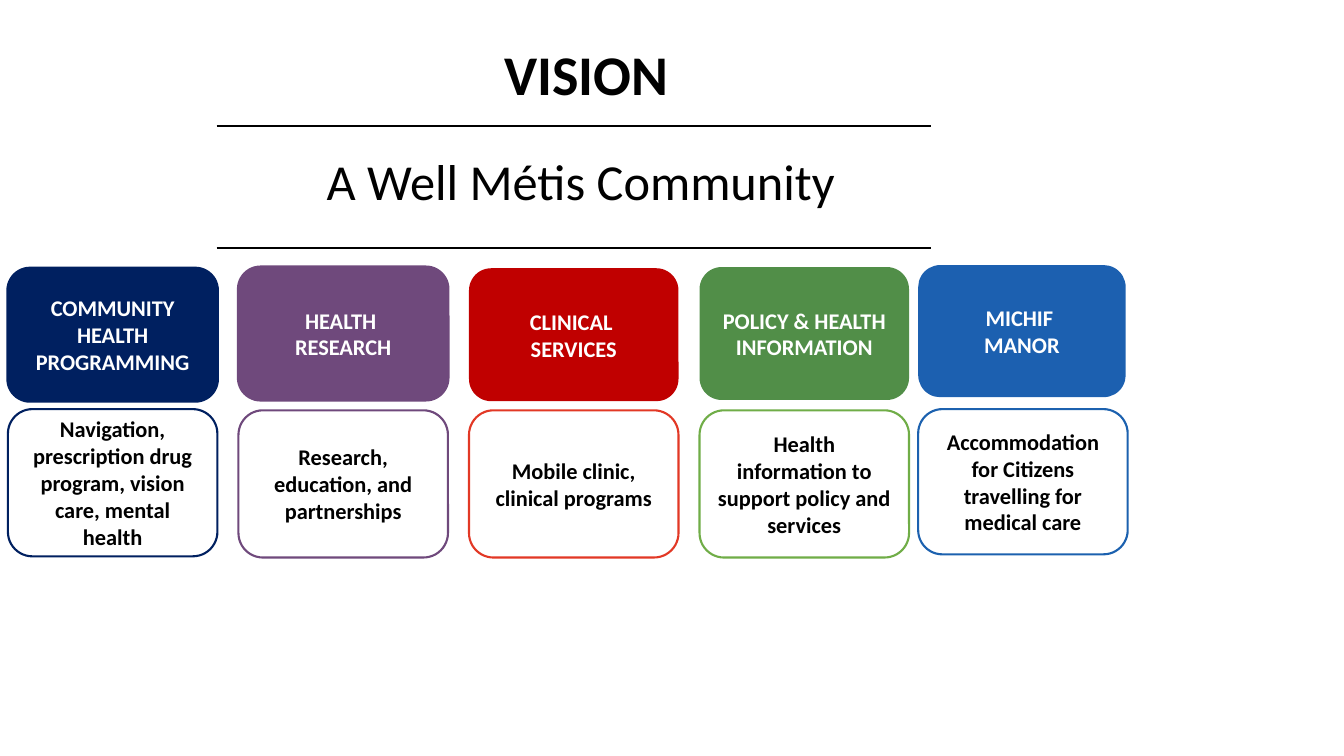
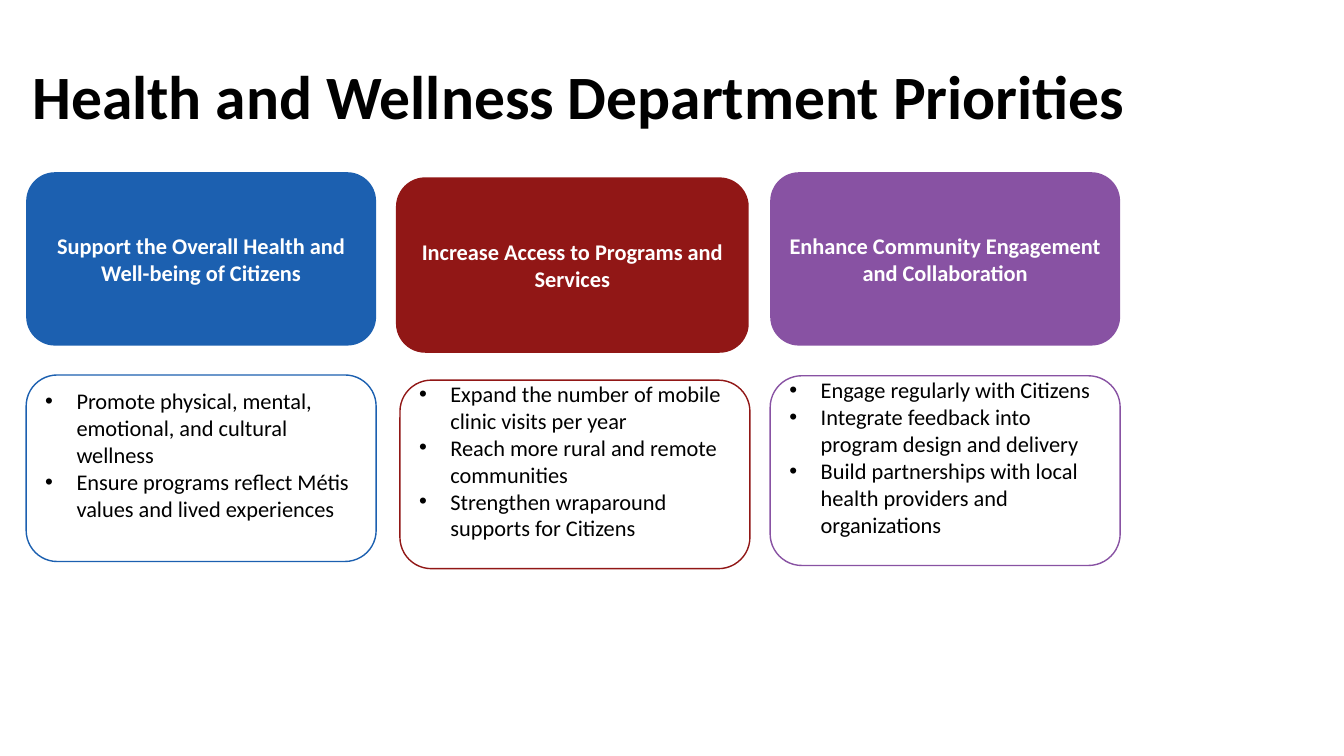
from dataclasses import dataclass
from typing import NamedTuple

from lxml.etree import SubElement
from pptx import Presentation
from pptx.dml.color import RGBColor
from pptx.enum.shapes import MSO_CONNECTOR as Link, MSO_SHAPE as Form
from pptx.enum.text import MSO_ANCHOR as Anchor, PP_ALIGN as Align
from pptx.oxml.ns import qn
from pptx.util import Cm, Pt

FONT = "Calibri"
BLACK, WHITE = "000000", "FFFFFF"
NAVY, PLUM, RED, GREEN, BLUE = "002060", "6F497C", "C00000", "518E48", "1C60B0"
MAROON, PURPLE = "911716", "8852A3"


class Box(NamedTuple):
    """Left, top, width and height in centimetres."""
    left: float
    top: float
    width: float
    height: float


@dataclass(frozen=True)
class Style:
    size: float = 16
    ink: str = BLACK
    bold: bool = False
    bullet: bool = False
    pitch: float = 1.0


@dataclass(frozen=True)
class Card:
    tint: str
    edge: str
    head: Box
    title: tuple[str, ...]
    body: Box
    lines: tuple[str, ...]
    rim: float = 0


HEAD = Style(ink=WHITE, bold=True)
NOTE = Style(bold=True)
LIST = Style(bullet=True)


# Shared helpers
def color(code: str) -> RGBColor:
    return RGBColor.from_string(code)


def place(box: Box) -> tuple[Cm, ...]:
    return tuple(Cm(side) for side in box)


def add_bullet(para) -> None:
    props = para._p.get_or_add_pPr()
    props.set("marL", str(Cm(0.79)))
    props.set("indent", str(-Cm(0.79)))
    SubElement(props, qn("a:buFont"), typeface="Arial")
    SubElement(props, qn("a:buChar"), char="•")


def write(frame, lines: tuple[str, ...], style: Style) -> None:
    frame.word_wrap = True
    for num, line in enumerate(lines):
        para = frame.add_paragraph() if num else frame.paragraphs[0]
        para.alignment = Align.LEFT if style.bullet else Align.CENTER
        para.line_spacing = style.pitch
        if style.bullet:
            add_bullet(para)
        run = para.add_run()
        run.text = line
        font = run.font
        font.name, font.size, font.bold = FONT, Pt(style.size), style.bold
        font.color.rgb = color(style.ink)


def add_text(slide, box: Box, text: str, style: Style, anchor=Anchor.TOP) -> None:
    frame = slide.shapes.add_textbox(*place(box)).text_frame
    frame.vertical_anchor = anchor
    write(frame, (text,), style)


def add_rule(slide, left: float, right: float, top: float) -> None:
    rule = slide.shapes.add_connector(Link.STRAIGHT, Cm(left), Cm(top), Cm(right), Cm(top))
    rule.line.color.rgb = color(BLACK)
    rule.line.width = Pt(1.5)
    SubElement(rule._element.spPr, qn("a:effectLst"))


def add_panel(slide, box: Box, lines: tuple[str, ...], style: Style,
              fill: str = "", edge: str = "", weight: float = 0) -> None:
    panel = slide.shapes.add_shape(Form.ROUNDED_RECTANGLE, *place(box))
    panel.shadow.inherit = False
    if fill:
        panel.fill.solid()
        panel.fill.fore_color.rgb = color(fill)
    else:
        panel.fill.background()
    if weight:
        panel.line.color.rgb = color(edge)
        panel.line.width = Pt(weight)
    else:
        panel.line.fill.background()
    frame = panel.text_frame
    frame.vertical_anchor = Anchor.MIDDLE
    if style.bullet:
        frame.margin_bottom = Cm(0.81)  # lifts the list above the middle
    write(frame, lines, style)


def add_cards(slide, cards: tuple[Card, ...], style: Style, weight: float) -> None:
    for card in cards:
        add_panel(slide, card.head, card.title, HEAD, card.tint, card.tint, card.rim)
        add_panel(slide, card.body, card.lines, style, edge=card.edge, weight=weight)


# Vision: four pillars on an even pitch, and the manor beside them
def pillar(col: int, tint: str, edge: str, tops: tuple[float, float],
           title: tuple[str, ...], text: str, rim: float = 0) -> Card:
    left = 0.2 + 5.81 * col
    return Card(tint, edge, Box(left, tops[0], 5.28, 3.35), title,
                Box(left, tops[1], 5.28, 3.71), (text,), rim)


PILLARS = (
    pillar(0, NAVY, NAVY, (6.76, 10.31), ("COMMUNITY HEALTH PROGRAMMING",),
           "Navigation, prescription drug program, vision care, mental health", 2.25),
    pillar(1, PLUM, PLUM, (6.73, 10.34), ("HEALTH ", "RESEARCH"),
           "Research, education, and partnerships", 2.25),
    pillar(2, RED, "E23825", (6.76, 10.34), ("CLINICAL ", "SERVICES"),
           "Mobile clinic, clinical programs"),
    pillar(3, GREEN, "70AD47", (6.73, 10.34), ("POLICY & HEALTH INFORMATION",),
           "Health information to support policy and services"),
    Card(BLUE, "1C61AF", Box(23.14, 6.68, 5.23, 3.33), ("MICHIF ", "MANOR"),
         Box(23.14, 10.31, 5.28, 3.66),
         ("Accommodation for Citizens travelling for medical care",)),
)

# Priorities: three cards with bulleted lists
GOALS = (
    Card(BLUE, BLUE, Box(0.66, 4.34, 8.82, 4.37),
         ("Support the Overall Health and Well-being of Citizens",),
         Box(0.66, 9.45, 8.82, 4.7),
         ("Promote physical, mental, emotional, and cultural wellness",
          "Ensure programs reflect Métis values and lived experiences")),
    Card(MAROON, MAROON, Box(9.98, 4.47, 8.89, 4.42),
         ("Increase Access to Programs and Services",),
         Box(10.08, 9.58, 8.82, 4.75),
         ("Expand the number of mobile clinic visits per year",
          "Reach more rural and remote communities",
          "Strengthen wraparound supports for Citizens")),
    Card(PURPLE, PURPLE, Box(19.41, 4.34, 8.82, 4.37),
         ("Enhance Community Engagement and Collaboration",),
         Box(19.41, 9.47, 8.82, 4.78),
         ("Engage regularly with Citizens",
          "Integrate feedback into program design and delivery",
          "Build partnerships with local health providers and organizations")),
)


def draw_vision(slide) -> None:
    add_text(slide, Box(9.32, 0.86, 10.92, 2.29), "VISION", Style(40, bold=True))
    add_text(slide, Box(5.61, 3.66, 18.34, 2.08), "A Well Métis Community ", Style(36))
    for top in (3.18, 6.25):
        add_rule(slide, 5.46, 23.47, top)
    add_cards(slide, PILLARS, NOTE, 1.5)


def draw_goals(slide) -> None:
    add_text(slide, Box(0, 0.66, 29.21, 3.68), "Health and Wellness Department Priorities",
             Style(44, bold=True, pitch=0.9), Anchor.MIDDLE)
    add_cards(slide, GOALS, LIST, 1)


def main() -> None:
    deck = Presentation()
    deck.slide_width, deck.slide_height = Cm(33.87), Cm(19.05)
    blank = deck.slide_layouts[6]
    for draw in (draw_vision, draw_goals):
        draw(deck.slides.add_slide(blank))
    deck.save("out.pptx")


if __name__ == "__main__":
    main()
